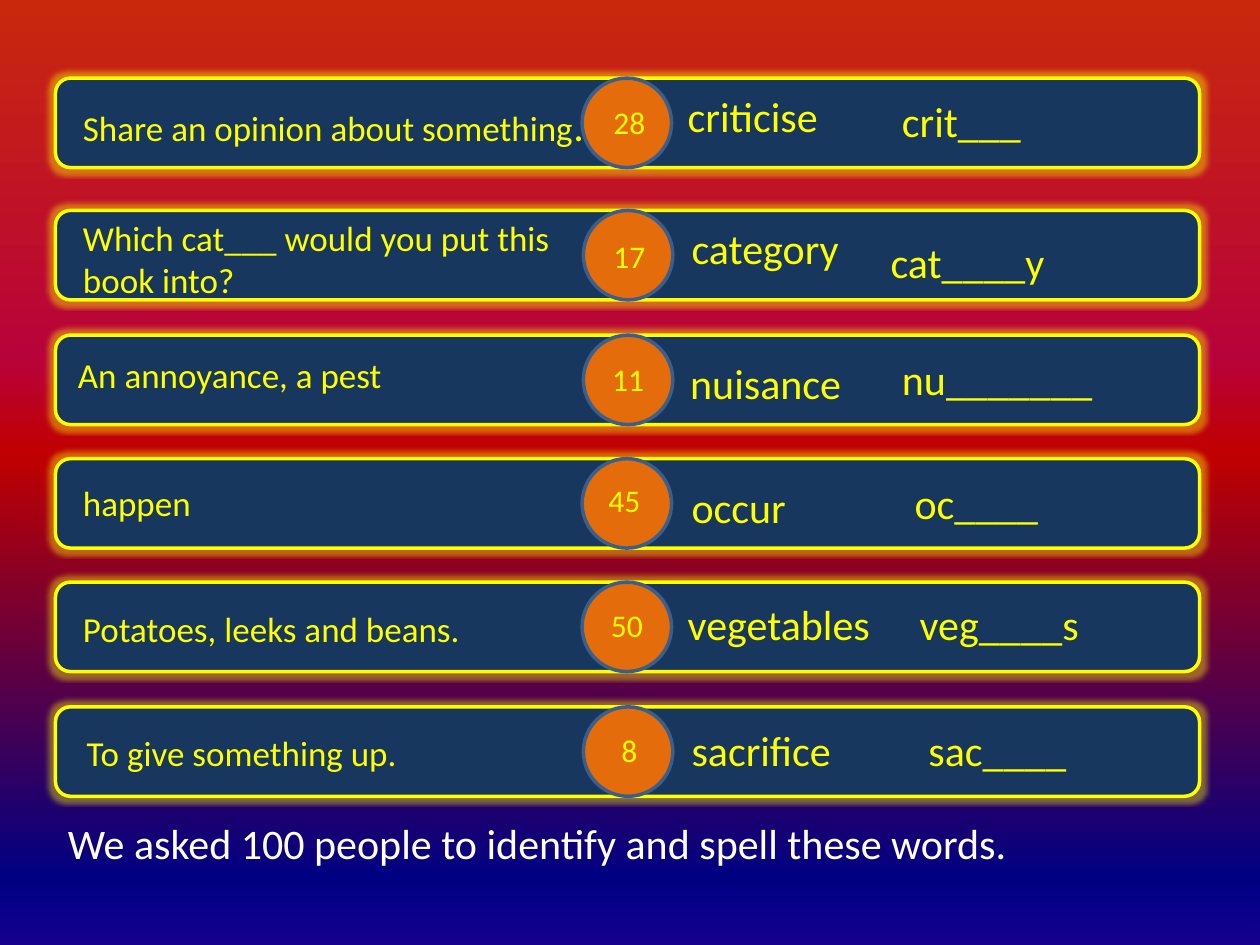
from dataclasses import dataclass

from lxml.etree import SubElement
from pptx import Presentation
from pptx.dml.color import RGBColor
from pptx.enum.shapes import MSO_SHAPE as Kind
from pptx.enum.text import MSO_AUTO_SIZE as Fit, PP_ALIGN as Align
from pptx.oxml.ns import qn
from pptx.util import Inches, Pt

NAVY = RGBColor(0x17, 0x37, 0x5E)
YELLOW = RGBColor(0xFF, 0xFF, 0x00)
ORANGE = RGBColor(0xE4, 0x6C, 0x0A)
BLUE = RGBColor(0x3A, 0x5F, 0x8C)
WHITE = RGBColor(0xFF, 0xFF, 0xFF)
STOPS = [
    (0, RGBColor(0xC9, 0x28, 0x0D)),
    (38, RGBColor(0xB8, 0x02, 0x3A)),
    (48, RGBColor(0xC0, 0x00, 0x00)),
    (93, RGBColor(0x00, 0x00, 0x82)),
    (100, RGBColor(0x15, 0x00, 0x90)),
]
FONT = "Calibri"
LEFT, WIDTH, SIZE = 0.44, 9.08, 0.71


@dataclass
class Label:
    text: str
    left: float
    top: float
    width: float
    size: int = 24
    height: float = 0.5
    tail: str = ""  # closing mark set at 24 pt


@dataclass
class Row:
    top: float
    disc: float
    clue: Label
    score: Label
    word: Label
    hint: Label


def clue(text: str, left: float, top: float, width: float,
         height: float = 0.44, tail: str = "") -> Label:
    return Label(text, left, top, width, 20, height, tail)


def score(text: str, left: float, top: float) -> Label:
    return Label(text, left, top, 0.47, 18, 0.4)


ROWS = [
    Row(0.62, 4.62,
        clue("Share an opinion about something", 0.56, 0.74, 4.37, 0.5, "."),
        score("28", 4.76, 0.77),
        Label("criticise", 5.36, 0.67, 1.37),
        Label("crit___", 7.06, 0.71, 1.22)),
    Row(1.67, 4.63,
        clue("Which cat___ would you put this book into?", 0.56, 1.67, 3.97, 0.77),
        score("17", 4.76, 1.83),
        Label("category", 5.39, 1.72, 1.67),
        Label("cat____y", 6.97, 1.83, 1.73)),
    Row(2.66, 4.63,
        clue("An annoyance, a pest", 0.52, 2.76, 4.11),
        score("11", 4.75, 2.81),
        Label("nuisance", 5.38, 2.79, 1.74),
        Label("nu_______", 7.06, 2.76, 1.89)),
    Row(3.64, 4.62,
        clue("happen", 0.56, 3.77, 1.41),
        score("45", 4.72, 3.77),
        Label("occur", 5.39, 3.77, 0.98),
        Label("oc____", 7.16, 3.74, 1.79)),
    Row(4.62, 4.62,
        clue("Potatoes, leeks and beans.", 0.56, 4.77, 3.65),
        score("50", 4.74, 4.76),
        Label("vegetables", 5.36, 4.7, 1.93),
        Label("veg____s", 7.2, 4.7, 1.5)),
    Row(5.61, 4.63,
        clue("To give something up.", 0.59, 5.76, 2.76),
        score("8", 4.76, 5.75),
        Label("sacrifice", 5.39, 5.7, 1.5),
        Label("sac____", 7.27, 5.7, 1.43)),
]
CAPTION = Label("We asked 100 people to identify and spell these words.",
                LEFT, 6.44, 8.35)


def paint_back(slide) -> None:
    fill = slide.background.fill
    fill.gradient()
    fill.gradient_angle = 270
    stops = slide.element.find(".//" + qn("a:gsLst"))
    for old in list(stops):
        stops.remove(old)
    for place, color in STOPS:
        stop = SubElement(stops, qn("a:gs"), pos=str(place * 1000))
        SubElement(stop, qn("a:srgbClr"), val=str(color))


def add_form(slide, kind: Kind, left: float, top: float, width: float,
             fill: RGBColor, line: RGBColor):
    form = slide.shapes.add_shape(kind, Inches(left), Inches(top),
                                  Inches(width), Inches(SIZE))
    form.shadow.inherit = False
    form.fill.solid()
    form.fill.fore_color.rgb = fill
    form.line.color.rgb = line
    form.line.width = Pt(2)
    return form


def add_glow(form, color: RGBColor) -> None:
    effects = form.element.find(".//" + qn("a:effectLst"))
    glow = SubElement(effects, qn("a:glow"), rad=str(Inches(0.07)))
    tint = SubElement(glow, qn("a:srgbClr"), val=str(color))
    SubElement(tint, qn("a:alpha"), val="40000")


def add_label(slide, label: Label, color: RGBColor = YELLOW,
              align: Align = Align.LEFT) -> None:
    box = slide.shapes.add_textbox(Inches(label.left), Inches(label.top),
                                   Inches(label.width), Inches(label.height))
    frame = box.text_frame
    frame.word_wrap = True
    frame.auto_size = Fit.SHAPE_TO_FIT_TEXT
    para = frame.paragraphs[0]
    para.alignment = align
    for text, size in ((label.text, label.size), (label.tail, 24)):
        if text:
            run = para.add_run()
            run.text = text
            run.font.name = FONT
            run.font.size = Pt(size)
            run.font.color.rgb = color


def main() -> None:
    deck = Presentation()
    deck.slide_width, deck.slide_height = Inches(10), Inches(7.5)
    slide = deck.slides.add_slide(deck.slide_layouts[6])
    paint_back(slide)

    # Glowing bars, then score discs
    for row in ROWS:
        bar = add_form(slide, Kind.ROUNDED_RECTANGLE, LEFT, row.top, WIDTH,
                       NAVY, YELLOW)
        add_glow(bar, YELLOW)
    for row in ROWS:
        add_form(slide, Kind.OVAL, row.disc, row.top, SIZE, ORANGE, BLUE)

    # Clues, scores, answers and hints
    for row in ROWS:
        add_label(slide, row.clue)
        add_label(slide, row.score, align=Align.CENTER)
        add_label(slide, row.word)
        add_label(slide, row.hint)

    # Caption
    add_label(slide, CAPTION, WHITE)
    deck.save("out.pptx")


if __name__ == "__main__":
    main()
